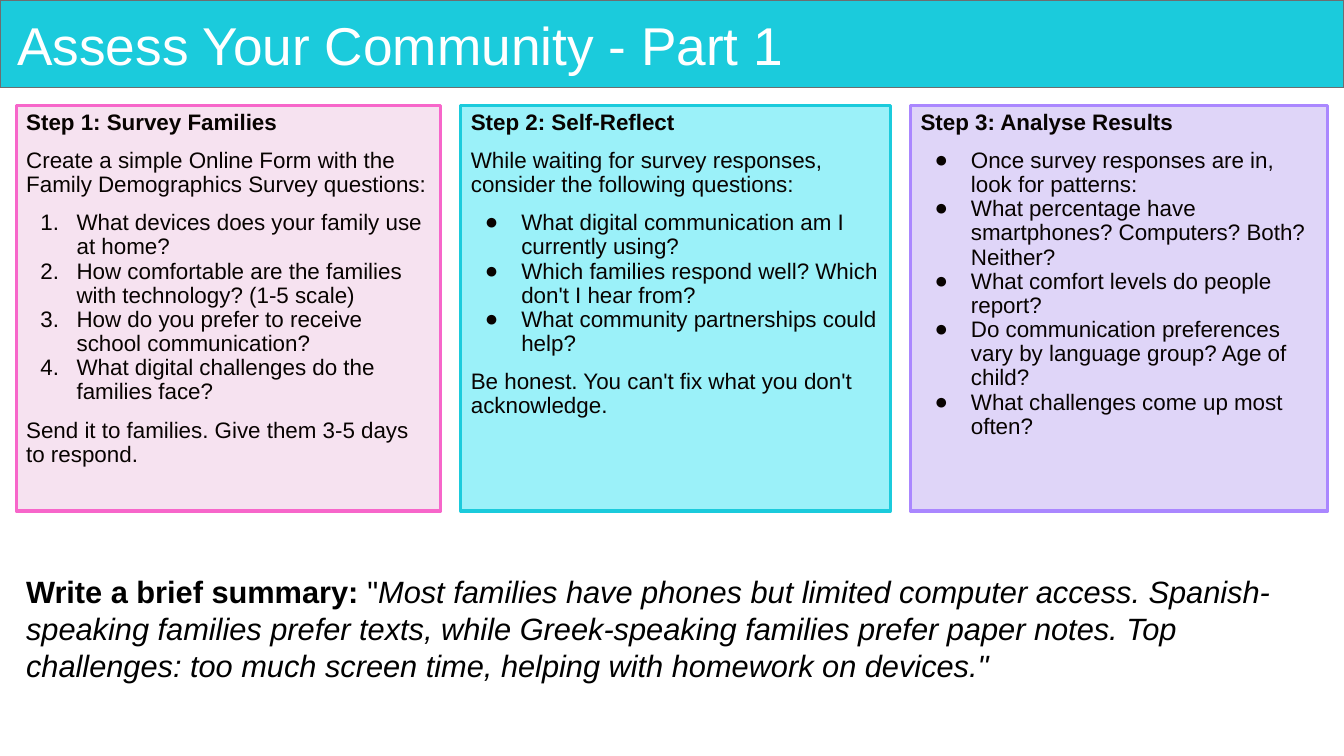
from lxml.etree import SubElement
from pptx import Presentation
from pptx.dml.color import RGBColor
from pptx.enum.shapes import MSO_SHAPE
from pptx.enum.text import MSO_ANCHOR, MSO_AUTO_SIZE, PP_ALIGN
from pptx.oxml.ns import qn
from pptx.util import Inches, Pt

COLORS = {
    "white": "FFFFFF", "black": "000000", "ink": "080301",
    "teal": "1BCBDC", "gray": "6C6E70", "aqua": "9BF1F9",
    "pink": "F766CA", "blush": "F6E2F0",
    "violet": "AA87FF", "lilac": "DFD5F8",
}
GAP = 0.2
STEPS = [
    (4.21, "blush", "pink", [
        ("head", "Step 1: Survey Families"),
        ("text", "Create a simple Online Form with the Family Demographics Survey questions:"),
        ("number", "What devices does your family use at home?"),
        ("number", "How comfortable are the families with technology? (1-5 scale)"),
        ("number", "How do you prefer to receive school communication?"),
        ("number", "What digital challenges do the families face?"),
        ("text", "Send it to families. Give them 3-5 days to respond."),
    ]),
    (4.26, "aqua", "teal", [
        ("head", "Step 2: Self-Reflect"),
        ("text", "While waiting for survey responses, consider the following questions:"),
        ("bullet", "What digital communication am I currently using?"),
        ("bullet", "Which families respond well? Which don't I hear from?"),
        ("bullet", "What community partnerships could help?"),
        ("text", "Be honest. You can't fix what you don't acknowledge."),
    ]),
    (4.14, "lilac", "violet", [
        ("head", "Step 3: Analyse Results"),
        ("bullet", "Once survey responses are in, look for patterns:"),
        ("bullet", "What percentage have smartphones? Computers? Both? Neither?"),
        ("bullet", "What comfort levels do people report?"),
        ("bullet", "Do communication preferences vary by language group? Age of child?"),
        ("bullet", "What challenges come up most often?"),
    ]),
]
SUMMARY = [
    ("Write a brief summary: ", True, False),
    ('"', False, False),
    ("Most families have phones but limited computer access. Spanish-speaking "
     "families prefer texts, while Greek-speaking families prefer paper notes. "
     "Top challenges: too much screen time, helping with homework on devices.\"",
     False, True),
]


def rgb(name):
    return RGBColor.from_string(COLORS[name])


def set_all(obj, **values):
    for name, value in values.items():
        setattr(obj, name, value)


def place(sp, left, top, width, height):
    set_all(sp, left=Inches(left), top=Inches(top),
            width=Inches(width), height=Inches(height))


def paint(sp, fill, line, weight):
    sp.fill.solid()
    sp.fill.fore_color.rgb = rgb(fill)
    sp.line.color.rgb = rgb(line)
    sp.line.width = Pt(weight)


def set_frame(tf, side, edge, anchor, auto_size=MSO_AUTO_SIZE.NONE):
    set_all(tf, word_wrap=True, auto_size=auto_size, vertical_anchor=anchor,
            margin_left=Inches(side), margin_right=Inches(side),
            margin_top=Inches(edge), margin_bottom=Inches(edge))


def add_run(p, text, size, color, bold=False, italic=False):
    r = p.add_run()
    r.text = text
    set_all(r.font, name="Arial", size=Pt(size), bold=bold, italic=italic)
    r.font.color.rgb = rgb(color)


def set_marker(p, kind):
    pPr = p._p.get_or_add_pPr()
    listed = kind in ("number", "bullet")
    pPr.set("marL", str(Inches(0.5 if listed else 0)))
    pPr.set("indent", str(Inches(-0.36 if listed else 0)))
    if not listed:
        SubElement(pPr, qn("a:buNone"))
        return
    color = SubElement(pPr, qn("a:buClr"))
    SubElement(color, qn("a:srgbClr"), val=COLORS["ink"])
    SubElement(pPr, qn("a:buFont"), typeface="Arial")
    if kind == "number":
        SubElement(pPr, qn("a:buAutoNum"), type="arabicPeriod")
    else:
        SubElement(pPr, qn("a:buChar"), char="●")


def add_title(s, text):
    banner = s.shapes.add_shape(MSO_SHAPE.RECTANGLE, 0, 0, Inches(13.33), Inches(0.87))
    banner.shadow.inherit = False
    paint(banner, "teal", "gray", 1)
    title = s.shapes.title
    title.element.addprevious(banner.element)
    place(title, 0.11, 0.09, 13.06, 0.78)
    set_frame(title.text_frame, 0.06, 0.06, MSO_ANCHOR.MIDDLE)
    p = title.text_frame.paragraphs[0]
    set_all(p, alignment=PP_ALIGN.LEFT, line_spacing=0.9)
    add_run(p, text, 38, "white")


def fill_step(sp, left, width, fill, line, items):
    place(sp, left, 1.05, width, 4.02)
    paint(sp, fill, line, 2.25)
    tf = sp.text_frame
    set_frame(tf, 0.1, 0.05, MSO_ANCHOR.TOP)
    previous = None
    for kind, text in items:
        p = tf.add_paragraph() if previous else tf.paragraphs[0]
        spaced = previous and kind != previous
        set_marker(p, kind)
        set_all(p, alignment=PP_ALIGN.LEFT, line_spacing=0.9,
                space_before=Pt(10 if spaced else 0), space_after=Pt(0))
        add_run(p, text, 16, "ink", bold=kind == "head")
        previous = kind


def add_summary(s):
    sp = s.shapes.add_textbox(Inches(0.16), Inches(5.58), Inches(13.01), Inches(1.31))
    set_frame(sp.text_frame, 0.1, 0.1, MSO_ANCHOR.TOP, MSO_AUTO_SIZE.SHAPE_TO_FIT_TEXT)
    p = sp.text_frame.paragraphs[0]
    p.space_after = Pt(14)
    for text, bold, italic in SUMMARY:
        add_run(p, text, 22, "black", bold, italic)


def main():
    prs = Presentation()
    set_all(prs, slide_width=Inches(13.33), slide_height=Inches(7.5))
    s = prs.slides.add_slide(prs.slide_layouts.get_by_name("Comparison"))
    add_title(s, "Assess Your Community - Part 1")
    bodies = list(s.placeholders)[1:]
    left = 0.16
    for sp, (width, fill, line, items) in zip(bodies, STEPS):
        fill_step(sp, left, width, fill, line, items)
        left += width + GAP
    for sp in bodies[len(STEPS):]:
        sp.element.getparent().remove(sp.element)
    add_summary(s)
    prs.save("out.pptx")


if __name__ == "__main__":
    main()
